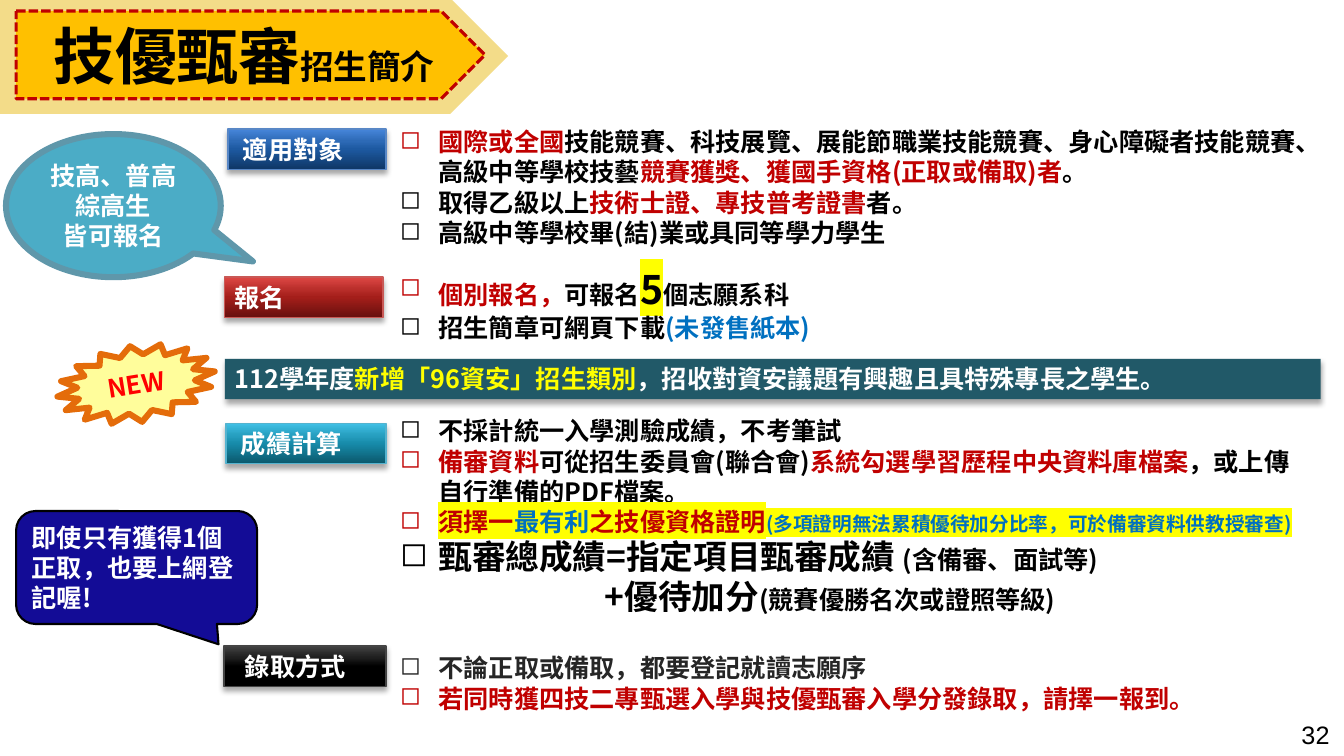
import collections

import lxml.etree
import pptx
import pptx.dml.color
import pptx.enum.dml
import pptx.enum.shapes
import pptx.enum.text
import pptx.oxml.ns
import pptx.util

RGBColor = pptx.dml.color.RGBColor
SHAPE = pptx.enum.shapes.MSO_SHAPE
ALIGN = pptx.enum.text.PP_ALIGN
ANCHOR = pptx.enum.text.MSO_ANCHOR
qn = pptx.oxml.ns.qn

BLACK = RGBColor(0x00, 0x00, 0x00)
WHITE = RGBColor(0xFF, 0xFF, 0xFF)
RED = RGBColor(0xC0, 0x00, 0x00)
BLUE = RGBColor(0x00, 0x70, 0xC0)
CHARCOAL = RGBColor(0x26, 0x26, 0x26)
YELLOW = RGBColor(0xFF, 0xFF, 0x00)
BRIGHT_RED = RGBColor(0xFF, 0x00, 0x00)
SAND = RGBColor(0xF3, 0xDC, 0x89)
AMBER = RGBColor(0xFF, 0xC0, 0x00)
AQUA = RGBColor(0x4B, 0xAC, 0xC6)
AQUA_EDGE = RGBColor(0x5F, 0x97, 0xAA)
CREAM = RGBColor(0xFF, 0xFD, 0x9B)
ORANGE = RGBColor(0xE4, 0x6C, 0x0A)
DARK_TEAL = RGBColor(0x21, 0x59, 0x68)
NAVY = RGBColor(0x13, 0x0C, 0x96)

BLUE_EDGE = RGBColor(0x58, 0x87, 0xC6)
RED_EDGE = RGBColor(0xC9, 0x59, 0x56)
TEAL_EDGE = RGBColor(0x54, 0xB3, 0xCF)
GREY_EDGE = RGBColor(0x44, 0x44, 0x44)
BLUE_RAMP = (RGBColor(0x0F, 0x37, 0x66), RGBColor(0x1D, 0x59, 0xA1),
             RGBColor(0x2D, 0x6A, 0xB6), RGBColor(0x47, 0x86, 0xDB))
RED_RAMP = (RGBColor(0x68, 0x10, 0x0E), RGBColor(0xA4, 0x1E, 0x1A),
            RGBColor(0xB9, 0x2E, 0x2A), RGBColor(0xDF, 0x48, 0x45))
TEAL_RAMP = (RGBColor(0x0B, 0x58, 0x6C), RGBColor(0x17, 0x8B, 0xAA),
             RGBColor(0x27, 0x9F, 0xC0), RGBColor(0x41, 0xC1, 0xE6))
BLACK_RAMP = (BLACK, BLACK, RGBColor(0x1D, 0x1D, 0x1D), RGBColor(0x42, 0x42, 0x42))

Span = collections.namedtuple("Span", "text color size mark", defaults=(BLACK, 18, None))
Line = collections.namedtuple("Line", "spans before height indent", defaults=(0, 21.5, None))


class Board:
    """Draw styled elements on one slide, with lengths in px."""

    SCALE = 9144
    FONT = "Noto Sans CJK SC"
    HANG = 38

    def __init__(self, slide):
        self.slide = slide

    def px(self, length):
        return pptx.util.Emu(length * self.SCALE)

    def element(self, parent, tag, **attributes):
        return lxml.etree.SubElement(parent, qn(tag), attributes)

    def add_spans(self, paragraph, spans, font=FONT, bold=True):
        first = spans[0]
        paragraph.font.name = font
        paragraph.font.bold = bold
        paragraph.font.size = pptx.util.Pt(first.size)
        paragraph.font.color.rgb = first.color
        defaults = paragraph._p.pPr.find(qn("a:defRPr"))
        self.element(defaults, "a:ea", typeface=font)
        for span in spans:
            run = paragraph.add_run()
            run.text = span.text
            if span.size != first.size:
                run.font.size = pptx.util.Pt(span.size)
            if span.color != first.color:
                run.font.color.rgb = span.color
            if span.mark:
                highlight = self.element(run._r.get_or_add_rPr(), "a:highlight")
                self.element(highlight, "a:srgbClr", val=str(span.mark))

    def fill_frame(self, frame, lines, align, bullets=False):
        for index, line in enumerate(lines):
            paragraph = frame.paragraphs[0] if index == 0 else frame.add_paragraph()
            paragraph.alignment = align
            if bullets:
                props = paragraph._p.get_or_add_pPr()
                hanging = line.indent is None
                props.set("marL", str(self.px(self.HANG if hanging else line.indent)))
                props.set("indent", str(self.px(-self.HANG if hanging else 0)))
                if hanging:
                    self.element(props, "a:buChar", char="◻")
            if line.height:
                paragraph.line_spacing = pptx.util.Pt(line.height)
            if line.before:
                paragraph.space_before = pptx.util.Pt(line.before)
            self.add_spans(paragraph, line.spans)

    def bullets(self, box, lines):
        frame = self.slide.shapes.add_textbox(*map(self.px, box)).text_frame
        frame.word_wrap = True
        self.fill_frame(frame, lines, ALIGN.LEFT, bullets=True)

    def page_number(self, box, number):
        frame = self.slide.shapes.add_textbox(*map(self.px, box)).text_frame
        self.add_spans(frame.paragraphs[0], [Span(number)], font="Arial", bold=False)

    def shape(self, kind, box, fill, lines=(), edge=None, width=1.0, align=ALIGN.LEFT,
              inset=10, adjust=()):
        shape = self.slide.shapes.add_shape(kind, *map(self.px, box))
        shape.shadow.inherit = False
        for index, value in enumerate(adjust):
            shape.adjustments[index] = value
        shape.fill.solid()
        shape.fill.fore_color.rgb = fill
        if edge is None:
            shape.line.fill.background()
        else:
            shape.line.color.rgb = edge
            shape.line.width = pptx.util.Pt(width)
        frame = shape.text_frame
        frame.word_wrap = True
        frame.vertical_anchor = ANCHOR.MIDDLE
        frame.margin_left = self.px(inset)
        self.fill_frame(frame, lines, align)
        return shape

    def banner(self, box, fill, spans, edge=None, inset=10):
        shape = self.shape(SHAPE.RECTANGLE, box, fill, [Line(spans)], edge, inset=inset)
        effects = shape._element.spPr.find(qn("a:effectLst"))
        shadow = self.element(effects, "a:outerShdw", blurRad="50800", dist="38100",
                              dir="5400000", rotWithShape="0")
        tint = self.element(shadow, "a:srgbClr", val=str(BLACK))
        self.element(tint, "a:alpha", val="35000")
        return shape

    def label(self, box, title, ramp, edge, inset):
        shape = self.banner(box, ramp[1], [Span(title, WHITE)], edge, inset)
        shape.fill.gradient()
        shape.fill.gradient_angle = 90
        stops = shape._element.spPr.find(qn("a:gradFill")).find(qn("a:gsLst"))
        stops.clear()
        for position, color in zip((0, 50, 70, 100), ramp):
            stop = self.element(stops, "a:gs", pos=str(position * 1000))
            self.element(stop, "a:srgbClr", val=str(color))


def main():
    deck = pptx.Presentation()
    deck.slide_width = pptx.util.Emu(1333 * Board.SCALE)
    deck.slide_height = pptx.util.Emu(750 * Board.SCALE)
    board = Board(deck.slides.add_slide(deck.slide_layouts[6]))

    board.page_number((1281, 709, 52, 40), "32")
    board.bullets((387, 121, 925, 620), [
        Line([Span("國際或全國", RED),
              Span("技能競賽、科技展覽、展能節職業技能競賽、身心障礙者技能競賽、高級中等學校技藝"),
              Span("競賽獲獎、獲國手資格(正取或備取)者", RED), Span("。")]),
        Line([Span("取得乙級以上"), Span("技術士證、專技普考證書", RED), Span("者。")]),
        Line([Span("高級中等學校畢(結)業或具同等學力學生")]),
        Line([Span("個別報名，", RED), Span("可報名"), Span("5", BLACK, 28, YELLOW),
              Span("個志願系科")], 13, 33.5),
        Line([Span("招生簡章可網頁下載"), Span("(未發售紙本)", BLUE)]),
        Line([Span("不採計統一入學測驗成績，不考筆試")], 52.5),
        Line([Span("備審資料", RED), Span("可從招生委員會(聯合會)"),
              Span("系統勾選學習歷程中央資料庫檔案", RED), Span("，或上傳自行準備的PDF檔案。")]),
        Line([Span("須擇一", RED, 18, YELLOW), Span("最有利", BLUE, 18, YELLOW),
              Span("之技優資格證明", RED, 18, YELLOW),
              Span("(多項證明無法累積優待加分比率，可於備審資料供教授審查)", BLUE, 14, YELLOW)]),
        Line([Span("甄審總成績=指定項目甄審成績 ", BLACK, 24), Span("(含備審、面試等)")], 0, 28.7),
        Line([Span("+優待加分", BLACK, 24), Span("(競賽優勝名次或證照等級)")], 0, 28.7, 203),
        Line([Span("不論正取或備取，都要登記就讀志願序", CHARCOAL)], 26),
        Line([Span("若同時獲四技二專甄選入學與技優甄審入學分發錄取，請擇一報到。", RED)]),
    ])

    board.shape(SHAPE.PENTAGON, (0, -2, 504, 115), SAND)
    heading = board.shape(
        SHAPE.PENTAGON, (16, 11, 465, 87), AMBER,
        [Line([Span("技優甄審", BLACK, 44), Span("招生簡介", BLACK, 24)], height=None)],
        RED, 2.25, inset=37)
    heading.line.dash_style = pptx.enum.dml.MSO_LINE.SQUARE_DOT

    board.shape(SHAPE.OVAL_CALLOUT, (6, 133, 213, 142), AQUA,
                [Line([Span(text, WHITE)]) for text in ("技高、普高", "綜高生", "皆可報名")],
                AQUA_EDGE, 4.33, ALIGN.CENTER, adjust=(0.65, 0.39))

    for box, title, ramp, edge, inset in (
        ((224, 420, 159, 40), "成績計算", TEAL_RAMP, TEAL_EDGE, 15),
        ((223, 275, 157, 40), "報名", RED_RAMP, RED_EDGE, 10),
        ((226, 128, 157, 40), "適用對象", BLUE_RAMP, BLUE_EDGE, 15),
        ((222, 641, 161, 40), "錄取方式", BLACK_RAMP, GREY_EDGE, 21),
    ):
        board.label(box, title, ramp, edge, inset)

    new_badge = board.shape(SHAPE.STAR_16_POINT, (56, 343, 158, 76), CREAM,
                            [Line([Span("NEW", BRIGHT_RED)])], ORANGE, 4.33, ALIGN.CENTER)
    new_badge.rotation = 350.9
    board.banner((223, 356, 1087, 40), DARK_TEAL, [
        Span("112學年度", WHITE), Span("新增「96資安」招生類別", YELLOW),
        Span("，招收對資安議題有興趣且具特殊專長之學生。", WHITE)])
    board.shape(SHAPE.ROUNDED_RECTANGULAR_CALLOUT, (16, 507, 239, 112), NAVY,
                [Line([Span("即使只有獲得1個正取，也要上網登記喔!", WHITE)])],
                BLACK, 1.5, adjust=(0.34, 0.68, 0.17))

    deck.save("out.pptx")


if __name__ == "__main__":
    main()
